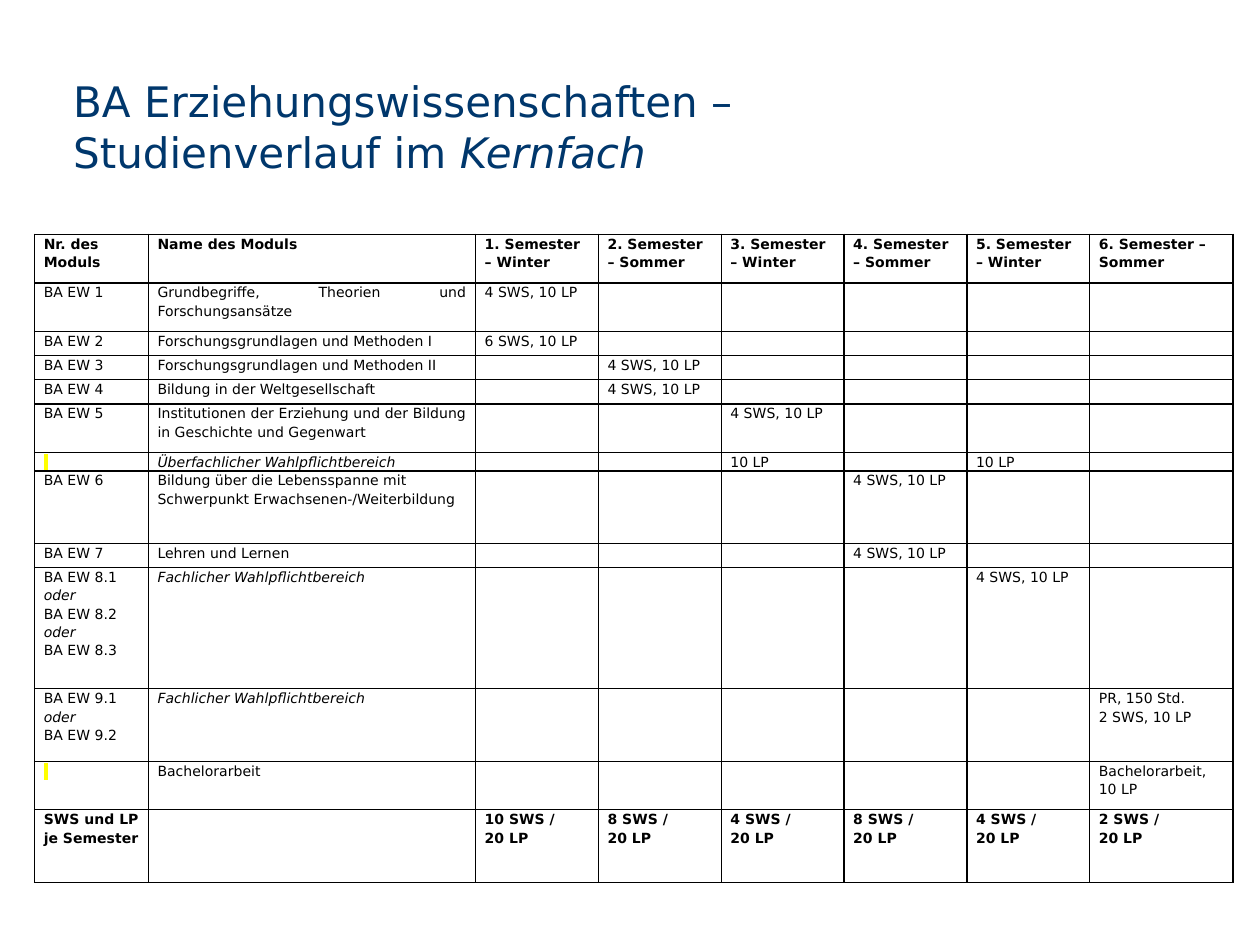
"""Build the course plan slide for the BA Erziehungswissenschaften."""
from dataclasses import dataclass, field

from pptx import Presentation
from pptx.dml.color import RGBColor
from pptx.enum import text as t
from pptx.oxml.xmlchemy import OxmlElement
from pptx.util import Pt

FONT = "DejaVu Sans"
NAVY, BLACK, YELLOW = "00376C", "000000", "FFFF00"
LINE_PITCH = 10.5
ROW_UNIT = 13.84
COLUMN_WIDTHS = [65, 187] + [70.2] * 5 + [82]
LOAD = "4 SWS, 10 LP"


@dataclass
class Module:
    number: str
    name: str
    semesters: dict[int, str] = field(default_factory=dict)
    units: float = 1
    bold: bool = False
    italic_name: bool = False
    justified: bool = True


SEASONS = ["Winter", "Sommer"]
HEADINGS = {n: f"{n}. Semester – {SEASONS[(n - 1) % 2]}" for n in range(1, 6)}
HEADINGS[6] = "6. Semester –\nSommer"
TOTALS = {n: f"{sws} SWS /\n20 LP" for n, sws in enumerate([10, 8, 4, 8, 4, 2], 1)}

MODULES = [
    Module("Nr. des\nModuls", "Name des Moduls", HEADINGS, 2, bold=True),
    Module("BA EW 1", "Grundbegriffe, Theorien und Forschungsansätze", {1: LOAD}, 2),
    Module("BA EW 2", "Forschungsgrundlagen und Methoden I", {1: "6 SWS, 10 LP"}),
    Module("BA EW 3", "Forschungsgrundlagen und Methoden II", {2: LOAD}),
    Module("BA EW 4", "Bildung in der Weltgesellschaft", {2: LOAD}),
    Module("BA EW 5", "Institutionen der Erziehung und der Bildung in Geschichte und Gegenwart",
           {3: LOAD}, 2),
    Module("", "Überfachlicher Wahlpflichtbereich", {3: "10 LP", 5: "10 LP"},
           LINE_PITCH / ROW_UNIT, italic_name=True),
    Module("BA EW 6", "Bildung über die Lebensspanne mit Schwerpunkt Erwachsenen-/Weiterbildung",
           {4: LOAD}, 3, justified=False),
    Module("BA EW 7", "Lehren und Lernen", {4: LOAD}),
    Module("BA EW 8.1\noder\nBA EW 8.2\noder\nBA EW 8.3", "Fachlicher Wahlpflichtbereich",
           {5: LOAD}, 5, italic_name=True),
    Module("BA EW 9.1\noder\nBA EW 9.2", "Fachlicher Wahlpflichtbereich",
           {6: "PR, 150 Std.\n2 SWS, 10 LP"}, 3, italic_name=True),
    Module("", "Bachelorarbeit", {6: "Bachelorarbeit, 10 LP"}, 2),
    Module("SWS und LP je Semester", "", TOTALS, 3, bold=True),
]


def color(hex_code: str) -> RGBColor:
    return RGBColor.from_string(hex_code)


def add_run(paragraph, words: str, size: float, hex_code: str,
            bold: bool = False, italic: bool = False):
    run = paragraph.add_run()
    run.text = words
    font = run.font
    font.name, font.size, font.bold, font.italic = FONT, Pt(size), bold, italic
    font.color.rgb = color(hex_code)
    return run


def add_highlight(run, hex_code: str) -> None:
    highlight = OxmlElement("a:highlight")
    tint = OxmlElement("a:srgbClr")
    tint.set("val", hex_code)
    highlight.append(tint)
    run.font._element.find("{*}solidFill").addnext(highlight)


def add_borders(cell, hex_code: str, width: float) -> None:
    properties = cell._tc.get_or_add_tcPr()
    for side in ("a:lnL", "a:lnR", "a:lnT", "a:lnB"):
        border = OxmlElement(side)
        border.set("w", str(Pt(width)))
        fill = OxmlElement("a:solidFill")
        tint = OxmlElement("a:srgbClr")
        tint.set("val", hex_code)
        fill.append(tint)
        border.append(fill)
        properties.append(border)


def fill_cell(cell, words: str, bold: bool = False, italic: bool = False,
              justified: bool = False, marked: bool = False) -> None:
    add_borders(cell, BLACK, 1)
    cell.fill.background()
    cell.margin_left = cell.margin_right = Pt(5.2)
    cell.margin_top = cell.margin_bottom = Pt(0)
    frame = cell.text_frame
    for index, line in enumerate(words.split("\n")):
        paragraph = frame.add_paragraph() if index else frame.paragraphs[0]
        paragraph.line_spacing = Pt(LINE_PITCH)
        paragraph.space_before = Pt(0)
        paragraph.alignment = t.PP_ALIGN.JUSTIFY if justified else t.PP_ALIGN.LEFT
        if line:
            add_run(paragraph, line, 8, BLACK, bold, italic or line == "oder")
        elif marked:
            add_highlight(add_run(paragraph, " ", 8, BLACK), YELLOW)
        else:
            ending = OxmlElement("a:endParaRPr")
            ending.set("sz", "800")
            paragraph._p.append(ending)


def add_title(slide) -> None:
    title = slide.shapes.title
    title.left, title.top, title.width, title.height = Pt(36), Pt(40.3), Pt(648), Pt(31)
    frame = title.text_frame
    frame.word_wrap = True
    frame.auto_size = t.MSO_AUTO_SIZE.NONE
    frame.vertical_anchor = t.MSO_ANCHOR.TOP
    frame.margin_left = frame.margin_right = Pt(5.8)
    frame.margin_top = frame.margin_bottom = Pt(2.9)
    heading = frame.paragraphs[0]
    heading.alignment = t.PP_ALIGN.LEFT
    heading.line_spacing = Pt(29)
    add_run(heading, "BA Erziehungswissenschaften –", 24, NAVY)
    heading.add_line_break()
    add_run(heading, "Studienverlauf im ", 24, NAVY)
    add_run(heading, "Kernfach", 24, NAVY, italic=True)


def add_plan(slide, modules: list[Module]) -> None:
    height = ROW_UNIT * sum(module.units for module in modules)
    plan = slide.shapes.add_table(len(modules), len(COLUMN_WIDTHS), Pt(19.8), Pt(134),
                                  Pt(sum(COLUMN_WIDTHS)), Pt(height)).table
    plan.first_row = plan.horz_banding = False
    for column, width in zip(plan.columns, COLUMN_WIDTHS):
        column.width = Pt(width)
    for row, module in zip(plan.rows, modules):
        row.height = Pt(ROW_UNIT * module.units)
        number, name, *semesters = row.cells
        fill_cell(number, module.number, module.bold, marked=True)
        fill_cell(name, module.name, module.bold, module.italic_name, module.justified)
        for semester, cell in enumerate(semesters, 1):
            fill_cell(cell, module.semesters.get(semester, ""), module.bold)


def main() -> None:
    deck = Presentation()
    deck.slide_width, deck.slide_height = Pt(720), Pt(540)
    slide = deck.slides.add_slide(deck.slide_layouts[5])
    add_title(slide)
    add_plan(slide, MODULES)
    deck.save("out.pptx")


if __name__ == "__main__":
    main()
